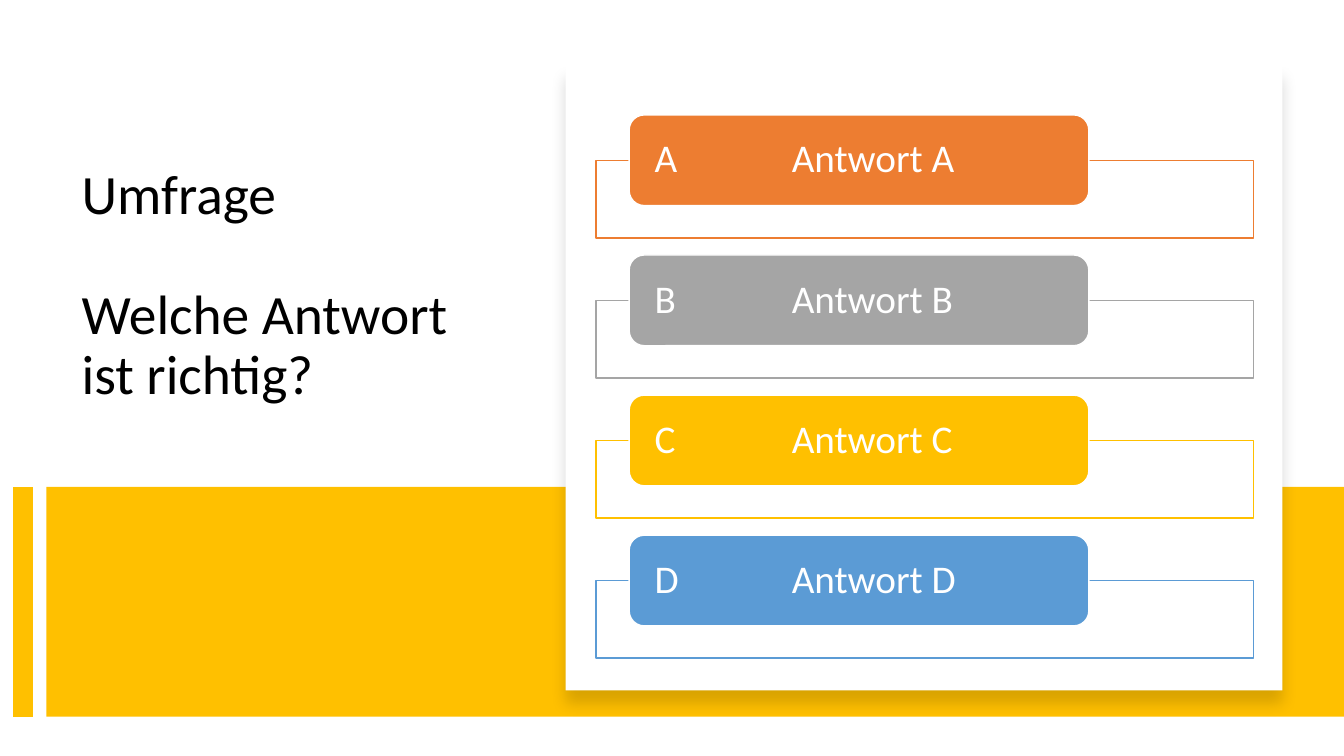
from dataclasses import dataclass

from lxml import etree
from pptx import Presentation
from pptx.dml.color import RGBColor
from pptx.enum.shapes import MSO_CONNECTOR, MSO_SHAPE
from pptx.enum.text import MSO_ANCHOR, MSO_AUTO_SIZE, PP_ALIGN
from pptx.oxml.ns import qn
from pptx.util import Inches, Pt

RECTANGLE = MSO_SHAPE.RECTANGLE
ROUNDED = MSO_SHAPE.ROUNDED_RECTANGLE
STRAIGHT = MSO_CONNECTOR.STRAIGHT
TOP = MSO_ANCHOR.TOP
MIDDLE = MSO_ANCHOR.MIDDLE
LEFT = PP_ALIGN.LEFT
NO_AUTOFIT = MSO_AUTO_SIZE.NONE
TITLE_ONLY = 5


@dataclass(frozen=True)
class Theme:
    font: str = "Calibri"
    title_size: float = 39.6
    answer_size: float = 28
    line_spacing: float = 0.9
    black: str = "000000"
    white: str = "FFFFFF"
    yellow: str = "FFC000"
    answers: tuple = ("ED7D31", "A5A5A5", "FFC000", "5B9BD5")


THEME = Theme()


def color(value):
    return RGBColor.from_string(value)


def add_box(page, kind, left, top, width, height, fill, line=None):
    box = page.shapes.add_shape(
        kind, Inches(left), Inches(top), Inches(width), Inches(height))
    box.shadow.inherit = False
    box.fill.solid()
    box.fill.fore_color.rgb = color(fill)
    if line:
        box.line.color.rgb = color(line)
        box.line.width = Pt(1)
    else:
        box.line.fill.background()
    return box


def add_bar(page, x, top, bottom, value, width):
    bar = page.shapes.add_connector(
        STRAIGHT, Inches(x), Inches(top), Inches(x), Inches(bottom))
    bar.line.color.rgb = color(value)
    bar.line.width = Pt(width)
    etree.SubElement(bar._element.spPr, qn("a:effectLst"))


def add_shadow(box, blur, distance, opacity):
    effects = box._element.spPr.find(qn("a:effectLst"))
    shadow = etree.SubElement(
        effects, qn("a:outerShdw"), blurRad=str(Pt(blur)),
        dist=str(Pt(distance)), dir="5400000", algn="t", rotWithShape="0")
    tint = etree.SubElement(shadow, qn("a:srgbClr"), val=THEME.black)
    etree.SubElement(tint, qn("a:alpha"), val=str(opacity * 1000))


def format_para(para, size, value):
    para.alignment = LEFT
    para.line_spacing = THEME.line_spacing
    para.font.name = THEME.font
    para.font.size = Pt(size)
    para.font.color.rgb = color(value)


def add_tab_stop(para, position):
    stops = etree.Element(qn("a:tabLst"))
    etree.SubElement(stops, qn("a:tab"), pos=str(Inches(position)), algn="l")
    para._p.pPr.find(qn("a:defRPr")).addprevious(stops)


def set_title(page, lines):
    title = page.shapes.title
    title.left, title.top = Inches(0.71), Inches(1.6)
    title.width, title.height = Inches(4.15), Inches(2.94)
    frame = title.text_frame
    frame.word_wrap = True
    frame.auto_size = NO_AUTOFIT
    frame.vertical_anchor = TOP
    frame.text = "\n".join(lines)
    for para in frame.paragraphs:
        format_para(para, THEME.title_size, THEME.black)
        para.space_before = Pt(0)
    frame.paragraphs[-1].space_before = Pt(43)


def add_answer(page, letter, top, accent):
    add_box(page, RECTANGLE, 5.91, top + 0.45, 6.52, 0.77, THEME.white, accent)
    box = add_box(page, ROUNDED, 6.24, top, 4.56, 0.9, accent, THEME.white)
    frame = box.text_frame
    frame.word_wrap = True
    frame.vertical_anchor = MIDDLE
    frame.margin_left = frame.margin_right = Inches(0.21)
    frame.margin_top = frame.margin_bottom = 0
    frame.text = f"{letter}\tAntwort {letter}"
    para = frame.paragraphs[0]
    format_para(para, THEME.answer_size, THEME.white)
    add_tab_stop(para, 1.36)


def main():
    deck = Presentation()
    deck.slide_width, deck.slide_height = Inches(13.33), Inches(7.5)
    page = deck.slides.add_slide(deck.slide_layouts[TITLE_ONLY])
    set_title(page, ["Umfrage", "Welche Antwort ist richtig?"])
    add_box(page, RECTANGLE, 0.46, 4.83, 12.87, 2.28, THEME.yellow)
    add_bar(page, 0.23, 4.83, 7.11, THEME.yellow, 14)
    panel = add_box(page, RECTANGLE, 5.61, 0.64, 7.11, 6.21, THEME.white)
    add_shadow(panel, 11, 10, 15)
    for row, (letter, accent) in enumerate(zip("ABCD", THEME.answers)):
        add_answer(page, letter, 1.14 + row * 1.39, accent)
    deck.save("out.pptx")


if __name__ == "__main__":
    main()
